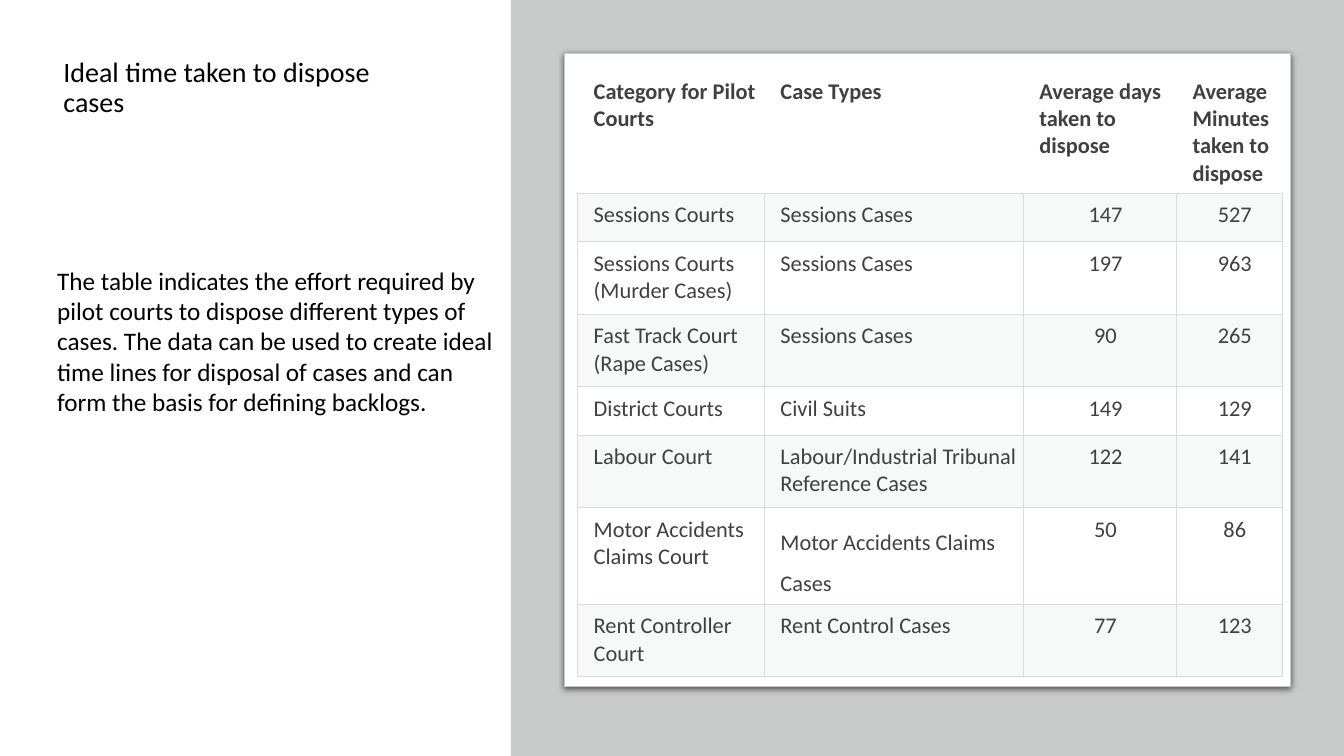
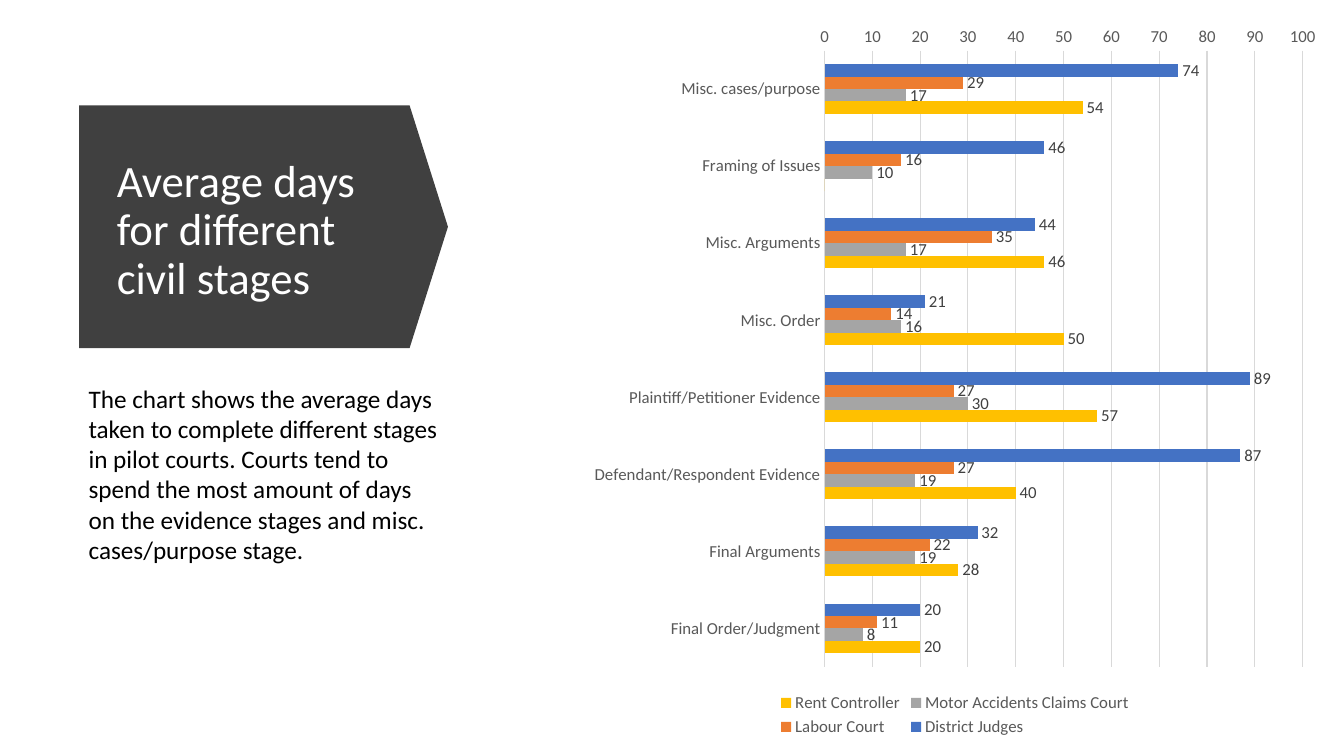
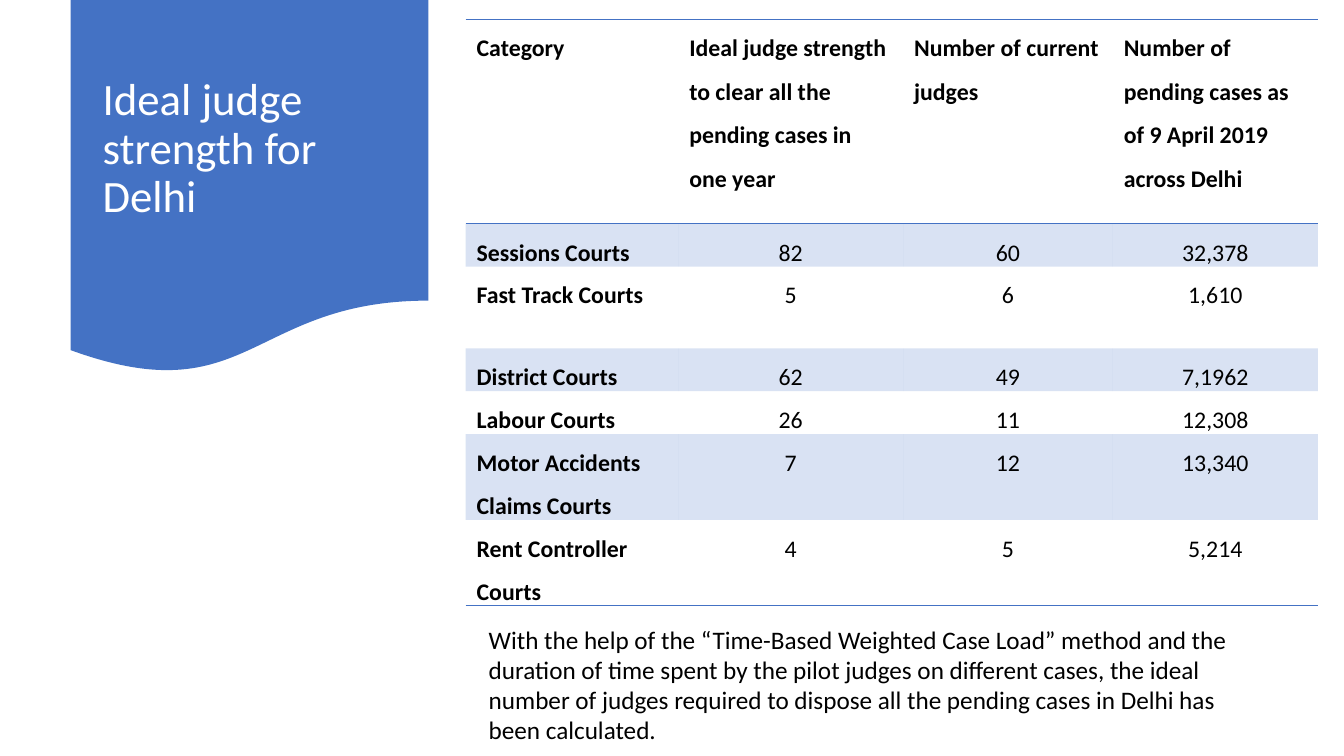
from dataclasses import dataclass

from lxml import etree
from pptx import Presentation
from pptx.chart import data as chart_data
from pptx.dml.color import RGBColor
from pptx.enum import chart as chart_enum, shapes, text
from pptx.oxml import parse_xml
from pptx.oxml.ns import nsdecls, qn
from pptx.util import Pt


@dataclass(frozen=True)
class Theme:
    font: str = "Calibri"
    ink: str = "000000"
    white: str = "FFFFFF"
    dark: str = "404040"
    muted: str = "595959"
    panel: str = "C8CACA"
    grid: str = "D9D9D9"
    cell_line: str = "D8DCDC"
    cell_band: str = "D8DEDC"
    blue: str = "4472C4"
    orange: str = "ED7D31"
    gray: str = "A5A5A5"
    yellow: str = "FFC000"
    title: int = 32
    heading: int = 20
    body: int = 18
    judge_cell: int = 17
    time_cell: int = 16
    chart: int = 12


theme = Theme()
LEFT, CENTER = text.PP_ALIGN.LEFT, text.PP_ALIGN.CENTER
TOP, MIDDLE = text.MSO_ANCHOR.TOP, text.MSO_ANCHOR.MIDDLE
NO_TABLE_STYLE = "{2D5ABB26-0587-4C30-8999-92F81FD0307C}"


def write(frame, wording, size=theme.body, color=theme.ink, bold=False,
          align=LEFT, anchor=TOP, spacing=None, before=None):
    frame.word_wrap = True
    frame.vertical_anchor = anchor
    for number, line in enumerate(wording.split("\n")):
        paragraph = frame.add_paragraph() if number else frame.paragraphs[0]
        paragraph.alignment = align
        if spacing:
            paragraph.line_spacing = spacing
        if before:
            paragraph.space_before = Pt(before)
        run = paragraph.add_run()
        run.text = line
        run.font.name, run.font.size, run.font.bold = theme.font, Pt(size), bold
        run.font.color.rgb = RGBColor.from_string(color)


def draw_table(slide, place, widths, heights, rows, edges, line, band, margins,
               bold_first=False, **style):
    """Header row, banded body rows; edges names the ruled sides of each row."""
    line_color, line_width = line
    box = (*place, sum(widths), sum(heights))
    table = slide.shapes.add_table(len(rows), len(widths), *map(Pt, box)).table
    table.first_row = table.horz_banding = False
    table._tbl.tblPr.find(qn("a:tableStyleId")).text = NO_TABLE_STYLE
    for column, width in zip(table.columns, widths):
        column.width = Pt(width)
    for r, (values, height) in enumerate(zip(rows, heights)):
        table.rows[r].height = Pt(height)
        for c, value in enumerate(values):
            cell = table.cell(r, c)
            write(cell.text_frame, value, bold=r == 0 or (bold_first and c == 0),
                  align=CENTER if r and value[0].isdigit() else LEFT, **style)
            (cell.margin_left, cell.margin_top,
             cell.margin_right, cell.margin_bottom) = map(Pt, margins)
            properties = cell._tc.get_or_add_tcPr()
            for side in edges[r]:
                properties.append(parse_xml(
                    f'<a:ln{side} {nsdecls("a")} w="{Pt(line_width)}"><a:solidFill>'
                    f'<a:srgbClr val="{line_color}"/></a:solidFill></a:ln{side}>'))
            if r % 2:
                cell.fill.solid()
                cell.fill.fore_color.rgb = RGBColor.from_string(band)
                tint = properties.find(".//" + qn("a:solidFill") + "[last()]")
                tint = properties.find(qn("a:solidFill")).find(qn("a:srgbClr"))
                etree.SubElement(tint, qn("a:alpha")).set("val", "20000")
            else:
                cell.fill.background()
    return table


deck = Presentation()
deck.slide_width, deck.slide_height = Pt(960), Pt(540)
time_slide, stage_slide, judge_slide = [
    deck.slides.add_slide(deck.slide_layouts[6]) for _ in range(3)]

# Background shapes of all slides
backdrops = []
for slide, kind, box, color in [
    (time_slide, shapes.MSO_SHAPE.RECTANGLE, (365, 0, 595, 540), theme.panel),
    (time_slide, shapes.MSO_SHAPE.ROUNDED_RECTANGLE, (403.2, 38.2, 518.4, 452.2), theme.white),
    (stage_slide, shapes.MSO_SHAPE.DOWN_ARROW, (101.5, 30.2, 173.5, 263.5), theme.dark),
    (judge_slide, shapes.MSO_SHAPE.FLOWCHART_DOCUMENT, (50.4, 0, 255.6, 267.8), theme.blue),
]:
    backdrop = slide.shapes.add_shape(kind, *map(Pt, box))
    backdrop.shadow.inherit = False
    backdrop.fill.solid()
    backdrop.fill.fore_color.rgb = RGBColor.from_string(color)
    backdrop.line.fill.background()
    backdrops.append(backdrop)
_, card, arrow, _ = backdrops

card.adjustments[0] = 0
card.line.color.rgb = RGBColor.from_string(theme.panel)
card.line.width = Pt(0.75)
card._element.spPr.find(qn("a:effectLst")).append(parse_xml(
    f'<a:outerShdw {nsdecls("a")} blurRad="{Pt(4.5)}" dist="{Pt(1.5)}" dir="5400000">'
    f'<a:srgbClr val="{theme.ink}"><a:alpha val="63000"/></a:srgbClr></a:outerShdw>'))
arrow.rotation = 270
arrow.adjustments[0], arrow.adjustments[1] = 1, 0.158

# Titles and explanations
title_style = dict(size=theme.title, color=theme.white, anchor=MIDDLE, spacing=0.9)
for slide, box, wording, style in [
    (time_slide, (38.2, 38.2, 275.8, 77.8), "Ideal time taken to dispose cases",
     dict(size=theme.heading, spacing=0.9, before=10)),
    (time_slide, (33.8, 185.8, 327.6, 138.2),
     "The table indicates the effort required by pilot courts to dispose different types "
     "of cases. The data can be used to create ideal time lines for disposal of cases and "
     "can form the basis for defining backlogs.", {}),
    (stage_slide, (76.3, 95, 210.2, 140.4), "Average days for different civil stages",
     title_style),
    (stage_slide, (56.2, 270, 263.5, 138.2),
     "The chart shows the average days taken to complete different stages in pilot courts. "
     "Courts tend to spend the most amount of days on the evidence stages and misc. "
     "cases/purpose stage.", {}),
    (judge_slide, (66.2, 13.7, 223.9, 186.5), "Ideal judge strength for Delhi", title_style),
    (judge_slide, (342, 442.1, 555.8, 94.3),
     "With the help of the “Time-Based Weighted Case Load” method and the duration of time "
     "spent by the pilot judges on different cases, the ideal number of judges required to "
     "dispose all the pending cases in Delhi has been calculated.", {}),
]:
    write(slide.shapes.add_textbox(*map(Pt, box)).text_frame, wording, **style)

# Slide 1: time per case type
time_rows = [
    ("Category for Pilot Courts", "Case Types", "Average days taken to dispose",
     "Average Minutes taken to dispose"),
    ("Sessions Courts", "Sessions Cases", "147", "527"),
    ("Sessions Courts\n(Murder Cases)", "Sessions Cases", "197", "963"),
    ("Fast Track Court (Rape Cases)", "Sessions Cases", "90", "265"),
    ("District Courts", "Civil Suits", "149", "129"),
    ("Labour Court", "Labour/Industrial Tribunal Reference Cases", "122", "141"),
    ("Motor Accidents Claims Court", "Motor Accidents Claims Cases", "50", "86"),
    ("Rent Controller Court", "Rent Control Cases", "77", "123"),
]
time_table = draw_table(
    time_slide, (412.6, 49.7), (133.4, 185, 109.4, 75.4),
    (86.4, 34.6, 51.8, 51.8, 34.6, 51.8, 66.2, 51.8), time_rows,
    edges=["B"] + ["LRTB"] * 7, line=(theme.cell_line, 0.75), band=theme.cell_band,
    margins=(11.5, 5.8, 3.6, 5.8), size=theme.time_cell, color=theme.dark)
time_table.cell(6, 1).text_frame.paragraphs[0].line_spacing = 1.5

# Slide 2: days per civil stage
stages = chart_data.CategoryChartData()
stages.categories = [
    "Misc. cases/purpose", "Framing of Issues", "Misc. Arguments", "Misc. Order",
    "Plaintiff/Petitioner Evidence", "Defendant/Respondent Evidence",
    "Final Arguments", "Final Order/Judgment"]
courts = [
    ("District Judges", theme.blue, (74, 46, 44, 21, 89, 87, 32, 20)),
    ("Labour Court", theme.orange, (29, 16, 35, 14, 27, 27, 22, 11)),
    ("Motor Accidents Claims Court", theme.gray, (17, 10, 17, 16, 30, 19, 19, 8)),
    ("Rent Controller", theme.yellow, (54, 0, 46, 50, 57, 40, 28, 20)),
]
for court, _, days in courts:
    stages.add_series(court, days)
stage_chart = stage_slide.shapes.add_chart(
    chart_enum.XL_CHART_TYPE.BAR_CLUSTERED, *map(Pt, (414, 8.6, 536.4, 520.6)), stages).chart
stage_chart.has_title = False
stage_chart.has_legend = True
stage_chart.legend.position = chart_enum.XL_LEGEND_POSITION.BOTTOM
stage_chart.legend.include_in_layout = False

bars = stage_chart.plots[0]
bars.gap_width = 219
bars.vary_by_categories = False
bars.has_data_labels = True
labels = bars.data_labels
labels.show_value = True
labels.position = chart_enum.XL_LABEL_POSITION.OUTSIDE_END
labels.number_format, labels.number_format_is_linked = "0;;", False  # zero stays blank
for series, (_, color, _) in zip(bars.series, courts):
    series.format.fill.solid()
    series.format.fill.fore_color.rgb = RGBColor.from_string(color)

stage_axis, day_axis = stage_chart.category_axis, stage_chart.value_axis
stage_axis.reverse_order = True
stage_axis.format.line.color.rgb = RGBColor.from_string(theme.grid)
stage_axis.format.line.width = Pt(0.75)
day_axis.minimum_scale, day_axis.maximum_scale, day_axis.major_unit = 0, 100, 10
day_axis.format.line.fill.background()
day_axis.major_gridlines.format.line.color.rgb = RGBColor.from_string(theme.grid)
day_axis.major_gridlines.format.line.width = Pt(0.75)
for axis in (stage_axis, day_axis):
    axis.major_tick_mark = axis.minor_tick_mark = chart_enum.XL_TICK_MARK.NONE
for font, color in [
    (stage_chart.font, theme.ink), (stage_chart.legend.font, theme.muted),
    (stage_axis.tick_labels.font, theme.muted), (day_axis.tick_labels.font, theme.muted),
    (labels.font, theme.dark),
]:
    font.name, font.size = theme.font, Pt(theme.chart)
    font.color.rgb = RGBColor.from_string(color)

# Slide 3: judge strength
judge_rows = [
    ("Category", "Ideal judge strength to clear all the pending cases in one year",
     "Number of current judges", "Number of pending cases as of 9 April 2019 across Delhi"),
    ("Sessions Courts", "82", "60", "32,378"),
    ("Fast Track Courts", "5", "6", "1,610"),
    ("District Courts", "62", "49", "7,1962"),
    ("Labour Courts", "26", "11", "12,308"),
    ("Motor Accidents Claims Courts", "7", "12", "13,340"),
    ("Rent Controller Courts", "4", "5", "5,214"),
]
draw_table(
    judge_slide, (332.6, 13.7), (151.9, 160.6, 149.8, 146.6),
    (146.2, 29.5, 58.3, 29.5, 29.5, 58.3, 58.3), judge_rows,
    edges=["TB"] + [""] * 5 + ["B"], line=(theme.blue, 1), band=theme.blue,
    margins=(7.9, 0, 7.9, 0), bold_first=True, size=theme.judge_cell, spacing=1.5)

deck.save("out.pptx")
